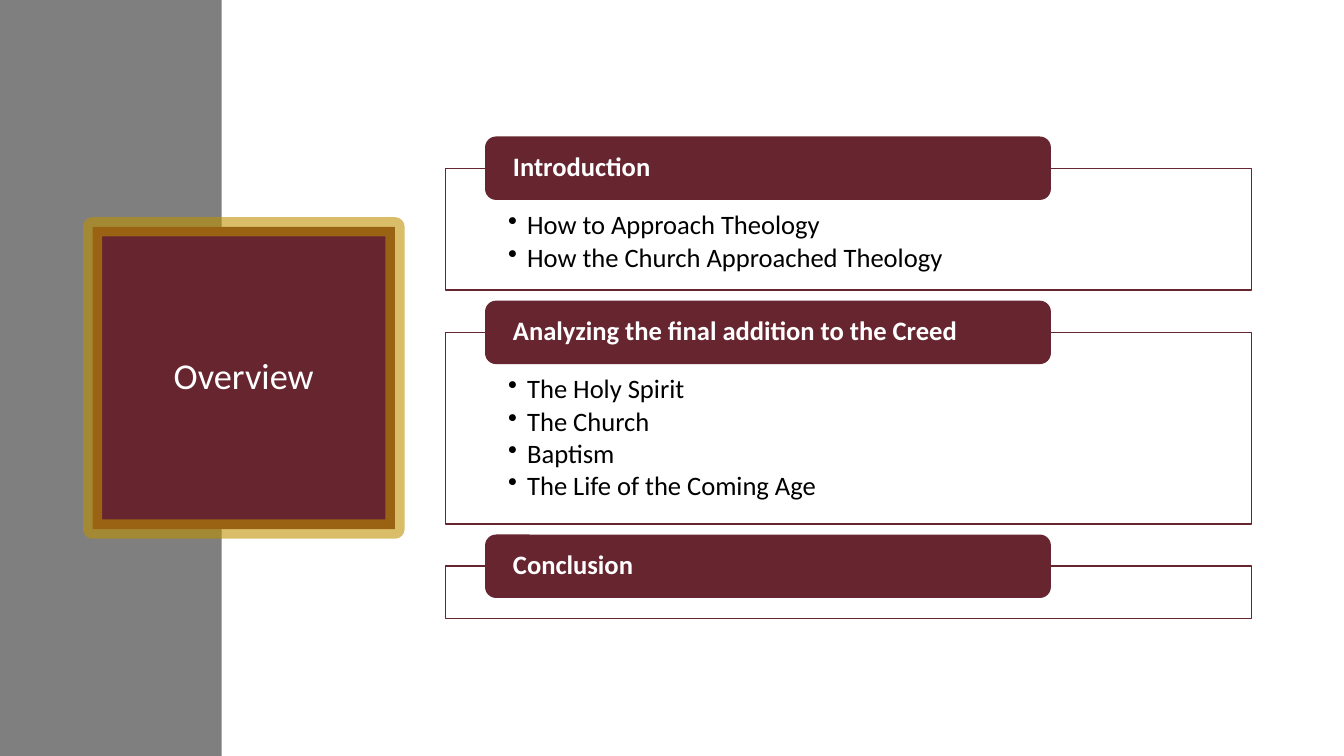
import pptx
import pptx.dml.color
import pptx.enum.shapes
import pptx.enum.text
import pptx.oxml
import pptx.oxml.ns
import pptx.util

Pt = pptx.util.Pt
RGBColor = pptx.dml.color.RGBColor
SHAPE = pptx.enum.shapes.MSO_SHAPE
ALIGN = pptx.enum.text.PP_ALIGN
ANCHOR = pptx.enum.text.MSO_ANCHOR
qn = pptx.oxml.ns.qn

WINE = RGBColor(0x66, 0x25, 0x2F)
GOLD = RGBColor(0xBF, 0x90, 0x00)
GREY = RGBColor(0x7F, 0x7F, 0x7F)
WHITE = RGBColor(0xFF, 0xFF, 0xFF)
BLACK = RGBColor(0, 0, 0)

FONT = "Calibri"
LEFT, TOP, WIDTH = 318.2, 98, 576
TAB_H, TAB_W, TAB_IN = 44.3, 403.2, 28.8
BASE_H, ITEM_H, GAP = 37.3, 24.9, 8
INDENT = 13.7

TOPICS = [
    ("Introduction",
     ["How to Approach Theology", "How the Church Approached Theology"]),
    ("Analyzing the final addition to the Creed",
     ["The Holy Spirit", "The Church", "Baptism",
      "The Life of the Coming Age"]),
    ("Conclusion", []),
]


def add_box(slide, kind, left, top, width, height, fill, line=None, weight=1):
    box = slide.shapes.add_shape(
        kind, Pt(left), Pt(top), Pt(width), Pt(height))
    box.shadow.inherit = False
    box.fill.solid()
    box.fill.fore_color.rgb = fill
    if line is None:
        box.line.fill.background()
    else:
        box.line.color.rgb = line
        box.line.width = Pt(weight)
    return box


def set_alpha(part, percent):
    """Make the first solid colour inside an XML part see-through."""
    color = next(part.iter(qn("a:srgbClr")))
    alpha = pptx.oxml.parse_xml(
        f'<a:alpha {pptx.oxml.ns.nsdecls("a")} val="{percent * 1000}"/>')
    color.append(alpha)


def add_bullet(para):
    props = para._p.get_or_add_pPr()
    props.set("marL", str(Pt(INDENT)))
    props.set("indent", str(-Pt(INDENT)))
    props.append(pptx.oxml.parse_xml(
        f'<a:buChar {pptx.oxml.ns.nsdecls("a")} char="•"/>'))


def put_text(box, lines, size=19, color=WHITE, bold=False, align=ALIGN.LEFT,
             anchor=ANCHOR.MIDDLE, inset=(0, 0, 0, 0), after=0, bullet=False):
    """Fill a shape with paragraphs; inset is left, top, right, bottom."""
    frame = box.text_frame
    frame.word_wrap = True
    frame.vertical_anchor = anchor
    (frame.margin_left, frame.margin_top,
     frame.margin_right, frame.margin_bottom) = map(Pt, inset)
    for i, line in enumerate(lines):
        para = frame.add_paragraph() if i else frame.paragraphs[0]
        para.alignment = align
        para.line_spacing = 0.9
        para.space_after = Pt(after)
        if bullet:
            add_bullet(para)
        run = para.add_run()
        run.text = line
        run.font.name = FONT
        run.font.size = Pt(size)
        run.font.bold = bold
        run.font.color.rgb = color


def add_title(slide, text):
    box = add_box(slide, SHAPE.RECTANGLE, 66.2, 162, 216, 216,
                  WINE, GOLD, 13.75)
    edge = box.line._get_or_add_ln()
    set_alpha(edge, 59)
    edge.append(pptx.oxml.parse_xml(
        f'<a:round {pptx.oxml.ns.nsdecls("a")}/>'))
    put_text(box, [text], size=26, align=ALIGN.CENTER)


def add_topic(slide, top, head, items):
    """Draw one topic and return the top of the next."""
    height = BASE_H + ITEM_H * len(items)
    body_top = top + TAB_H / 2
    body = add_box(slide, SHAPE.RECTANGLE, LEFT, body_top, WIDTH, height,
                   WHITE, WINE)
    set_alpha(body.fill._xPr, 66)
    if items:
        put_text(body, items, color=BLACK, anchor=ANCHOR.TOP, after=2.6,
                 inset=(44.7, 31, 44.7, 10.8), bullet=True)
    tab = add_box(slide, SHAPE.ROUNDED_RECTANGLE, LEFT + TAB_IN, top,
                  TAB_W, TAB_H, WINE, WINE)
    put_text(tab, [head], bold=True, inset=(17.3, 0, 17.3, 0))
    return body_top + height + GAP


def main():
    deck = pptx.Presentation()
    deck.slide_width, deck.slide_height = Pt(960), Pt(540)
    slide = deck.slides.add_slide(deck.slide_layouts[6])
    add_box(slide, SHAPE.RECTANGLE, 0, 0, 158.4, 540, GREY)
    add_title(slide, "Overview")
    top = TOP
    for head, items in TOPICS:
        top = add_topic(slide, top, head, items)
    deck.save("out.pptx")


if __name__ == "__main__":
    main()
